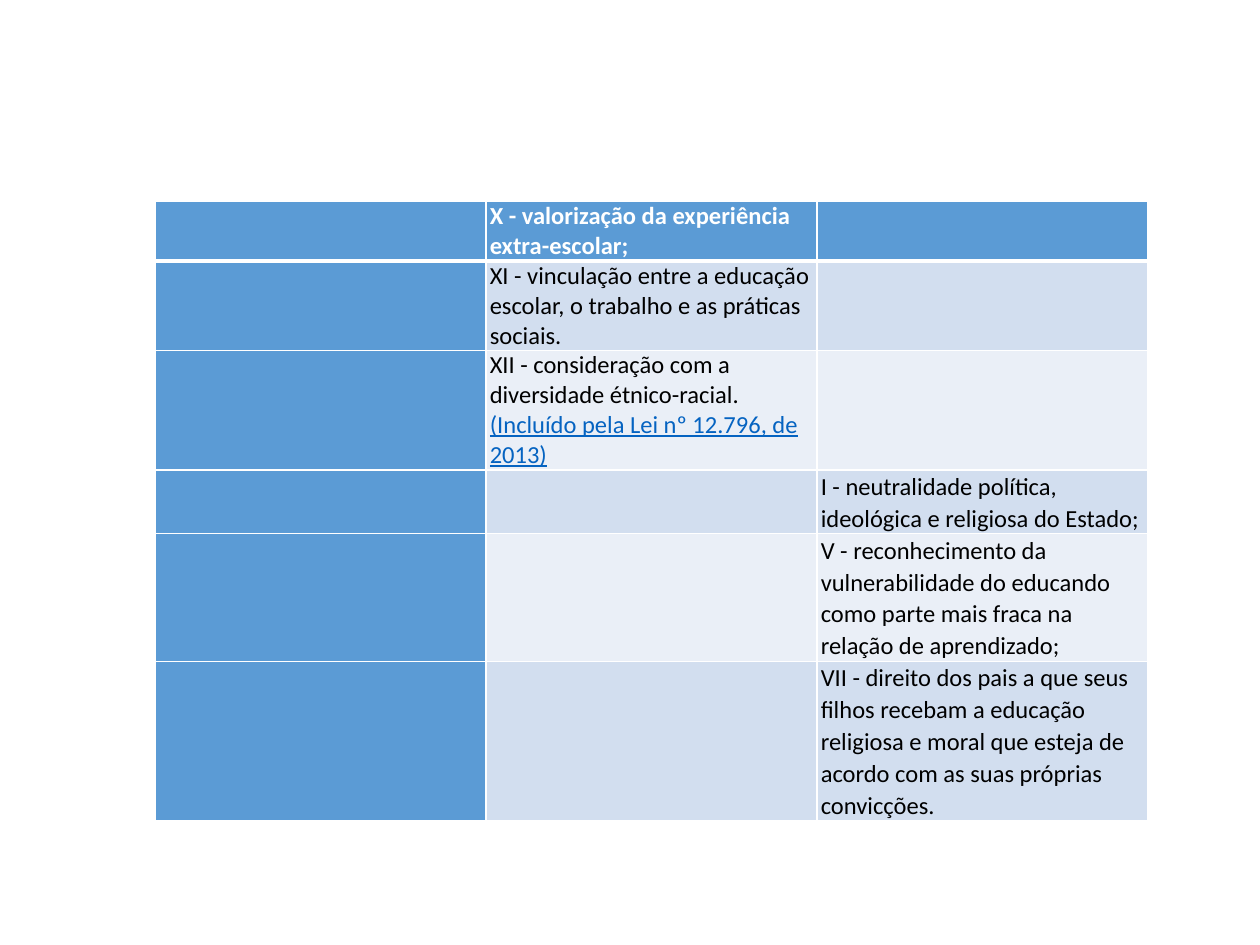
from lxml.etree import fromstring
from pptx import Presentation
from pptx.dml.color import RGBColor
from pptx.oxml.ns import nsdecls
from pptx.util import Cm, Pt

THEME = {
    "font": "Calibri", "size": 14,
    "head": "5B9BD5", "odd": "D2DEEF", "even": "EAEFF7",
    "light": "FFFFFF", "dark": "000000", "link": "0563C1",
    "thin": 1, "thick": 3,
}

ROWS = [
    (1.14, 1, ["X - valorização da experiência extra-escolar;"]),
    (1.73, 1, ["XI - vinculação entre a educação escolar, o trabalho e as práticas sociais."]),
    (2.29, 1, ["XII - consideração com a diversidade étnico-racial.  ",
               "(Incluído pela Lei nº 12.796, de 2013)"]),
    (1.22, 2, ["I - neutralidade política, ideológica e religiosa do Estado;"]),
    (2.44, 2, ["V - reconhecimento da vulnerabilidade do educando como parte mais fraca "
               "na relação de aprendizado;"]),
    (3.05, 2, ["VII - direito dos pais a que seus filhos recebam a educação religiosa e moral "
               "que esteja de acordo com as suas próprias convicções."]),
]
COLS = 3
LEFT, TOP, WIDTH = 3.12, 4.06, 20.02
INSET = {"margin_left": Cm(0.08), "margin_right": Cm(0.08),
         "margin_top": Cm(0), "margin_bottom": Cm(0)}
SPACING = {"line_spacing": 1.07, "space_after": Pt(8)}


def apply(target, values):
    for name, value in values.items():
        setattr(target, name, value)


def edge(cell, row):
    sides = {"L": "thin", "R": "thin",
             "T": "thick" if row == 1 else "thin",
             "B": "thick" if row == 0 else "thin"}
    props = cell._tc.get_or_add_tcPr()
    for spot, (side, width) in enumerate(sides.items()):
        props.insert(spot, fromstring(
            f'<a:ln{side} {nsdecls("a")} w="{Pt(THEME[width])}">'
            f'<a:solidFill><a:srgbClr val="{THEME["light"]}"/></a:solidFill>'
            f'</a:ln{side}>'))


def shade(cell, row, col):
    tone = "head" if row == 0 or col == 0 else "odd" if row % 2 else "even"
    cell.fill.solid()
    cell.fill.fore_color.rgb = RGBColor.from_string(THEME[tone])
    edge(cell, row)


def write(cell, row, col, parts):
    apply(cell, INSET)
    para = cell.text_frame.paragraphs[0]
    if col == 2:
        apply(para, SPACING)
    for spot, text in enumerate(parts):
        run = para.add_run()
        run.text = text
        tone = "link" if spot else "dark" if row else "light"
        apply(run.font, {"name": THEME["font"], "size": Pt(THEME["size"]),
                         "bold": row == 0, "underline": spot > 0})
        run.font.color.rgb = RGBColor.from_string(THEME[tone])


def main():
    deck = Presentation()
    apply(deck, {"slide_width": Cm(25.4), "slide_height": Cm(19.05)})
    slide = deck.slides.add_slide(deck.slide_layouts[6])
    height = sum(size for size, _, _ in ROWS)
    grid = slide.shapes.add_table(len(ROWS), COLS, Cm(LEFT), Cm(TOP),
                                  Cm(WIDTH), Cm(height)).table
    for column in grid.columns:
        column.width = Cm(WIDTH / COLS)
    for row, (size, place, parts) in enumerate(ROWS):
        grid.rows[row].height = Cm(size)
        for col in range(COLS):
            shade(grid.cell(row, col), row, col)
        write(grid.cell(row, place), row, place, parts)
    deck.save("out.pptx")


if __name__ == "__main__":
    main()
